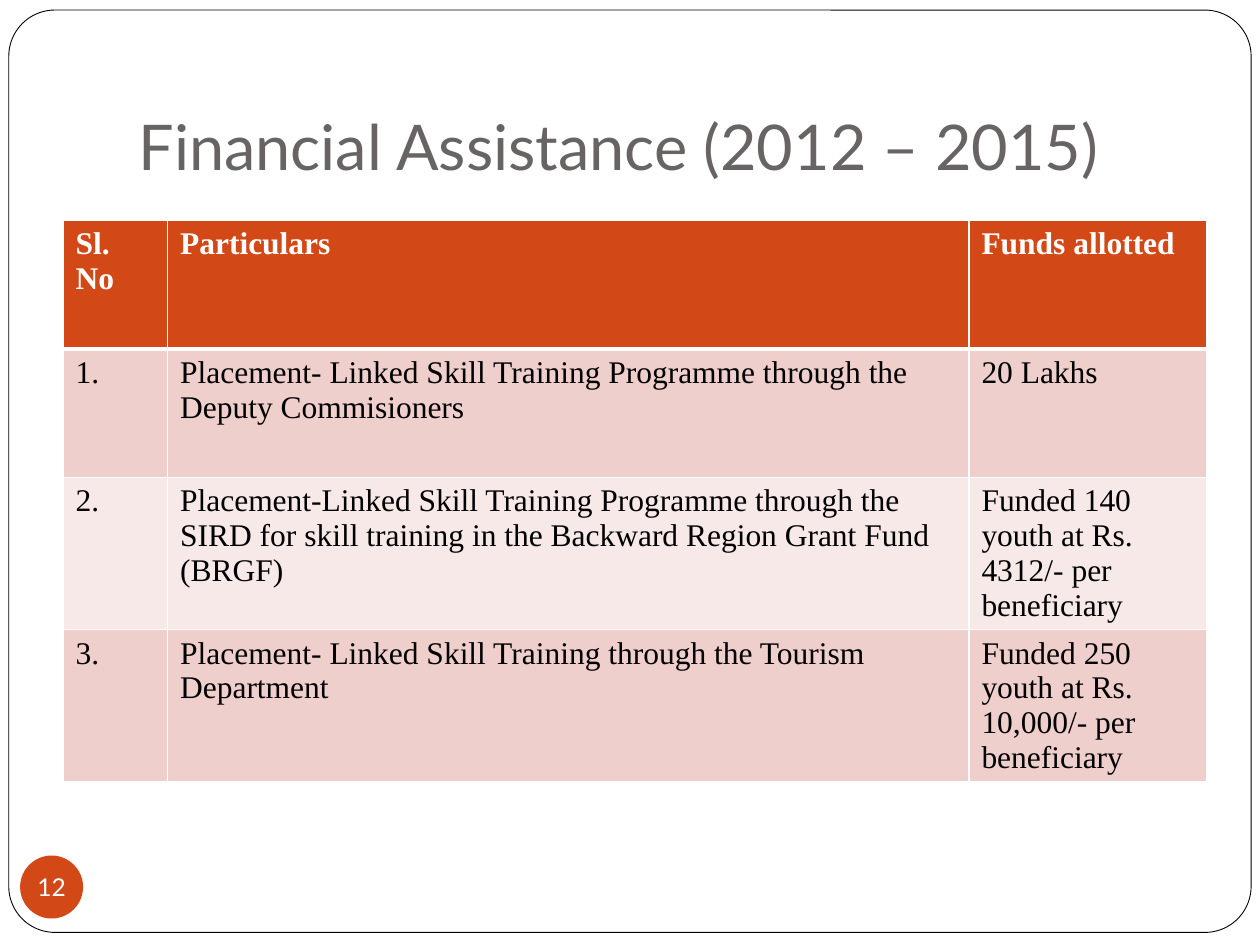
import pptx
import pptx.dml.color
import pptx.enum.shapes
import pptx.enum.text
import pptx.oxml
import pptx.oxml.ns
import pptx.util

Inches = pptx.util.Inches
Pt = pptx.util.Pt
Shape = pptx.enum.shapes.MSO_SHAPE
Align = pptx.enum.text.PP_ALIGN
Anchor = pptx.enum.text.MSO_ANCHOR

WHITE, BLACK, GREY = "FFFFFF", "000000", "696464"
ORANGE, ROSE, BLUSH = "D34817", "EFCFCC", "F7E9E8"
WIDTHS = [0.83, 6.36, 1.89]
ROWS = [
    ("Sl. No", "Particulars", "Funds allotted"),
    ("1.", "Placement- Linked Skill Training Programme through the "
     "Deputy Commisioners", "20 Lakhs"),
    ("2.", "Placement-Linked Skill Training Programme through the SIRD for "
     "skill training in the Backward Region Grant Fund (BRGF)",
     "Funded 140 youth at Rs. 4312/- per beneficiary"),
    ("3.", "Placement- Linked Skill Training through the Tourism Department",
     "Funded 250 youth at Rs. 10,000/- per beneficiary"),
]


def color(code):
    return pptx.dml.color.RGBColor.from_string(code)


def assign(thing, values):
    for name, value in values.items():
        setattr(thing, name, value)


def paint(thing, code):
    thing.fill.solid()
    thing.fill.fore_color.rgb = color(code)


def style(par, name, size, code, bold=False):
    assign(par.font, {"name": name, "size": Pt(size), "bold": bold})
    par.font.color.rgb = color(code)


def add_shape(slide, kind, box, code):
    shape = slide.shapes.add_shape(kind, *map(Inches, box))
    shape.shadow.inherit = False
    paint(shape, code)
    return shape


def add_frame(slide, box):
    """Draw the rounded page border behind everything else."""
    frame = add_shape(slide, Shape.ROUNDED_RECTANGLE, box, WHITE)
    frame.adjustments[0] = 0.05
    frame.line.color.rgb = color(BLACK)
    frame.line.width = Pt(0.5)
    slide.shapes.element.insert(2, frame.element)


def set_title(slide, box, text):
    title = slide.shapes.title
    left, top, width, height = map(Inches, box)
    assign(title, {"left": left, "top": top, "width": width, "height": height})
    frame = title.text_frame
    frame.text = text
    assign(frame, {
        "vertical_anchor": Anchor.BOTTOM, "word_wrap": True,
        "auto_size": pptx.enum.text.MSO_AUTO_SIZE.NONE,
        "margin_left": Inches(0.1), "margin_right": Inches(0.1),
        "margin_top": Inches(0.05), "margin_bottom": Inches(0.1)})
    par = frame.paragraphs[0]
    par.alignment = Align.LEFT
    style(par, "Lato", 36, GREY)


def add_edges(cell, head, under):
    """Give a cell white borders, thick between header and body."""
    wide = {"lnT": under, "lnB": head}
    props = cell._tc.get_or_add_tcPr()
    for spot, tag in enumerate(("lnL", "lnR", "lnT", "lnB")):
        width = Pt(3 if wide.get(tag) else 1)
        props.insert(spot, pptx.oxml.parse_xml(
            f'<a:{tag} {pptx.oxml.ns.nsdecls("a")} w="{width}"><a:solidFill>'
            f'<a:srgbClr val="{WHITE}"/></a:solidFill></a:{tag}>'))


def add_funds(slide, box):
    table = slide.shapes.add_table(
        len(ROWS), len(WIDTHS), *map(Inches, box)).table
    for column, width in zip(table.columns, WIDTHS):
        column.width = Inches(width)
    for index, row in enumerate(ROWS):
        head = index == 0
        table.rows[index].height = Inches(box[3] / len(ROWS))
        fill = ORANGE if head else (BLUSH, ROSE)[index % 2]
        for place, text in enumerate(row):
            cell = table.cell(index, place)
            cell.text = text
            paint(cell, fill)
            add_edges(cell, head, index == 1)
            style(cell.text_frame.paragraphs[0], "Times New Roman", 18,
                  WHITE if head else BLACK, head)


def add_badge(slide, box, text):
    """Draw the page number in a disc."""
    badge = add_shape(slide, Shape.OVAL, box, ORANGE)
    badge.line.fill.background()
    frame = badge.text_frame
    frame.text = text
    assign(frame, {
        "vertical_anchor": Anchor.MIDDLE, "word_wrap": False,
        "margin_left": 0, "margin_right": 0,
        "margin_top": 0, "margin_bottom": 0})
    par = frame.paragraphs[0]
    par.alignment = Align.CENTER
    style(par, "Lato", 14, WHITE)


def main():
    deck = pptx.Presentation()
    assign(deck, {"slide_width": Inches(10), "slide_height": Inches(7.5)})
    slide = deck.slides.add_slide(deck.slide_layouts[5])
    add_frame(slide, (0.07, 0.08, 9.86, 7.32))
    set_title(slide, (1, 0.3, 8.5, 1.25), "Financial Assistance (2012 – 2015)")
    add_funds(slide, (0.5, 1.75, 9.08, 4.08))
    add_badge(slide, (0.16, 6.79, 0.5, 0.5), "12")
    deck.save("out.pptx")


if __name__ == "__main__":
    main()
